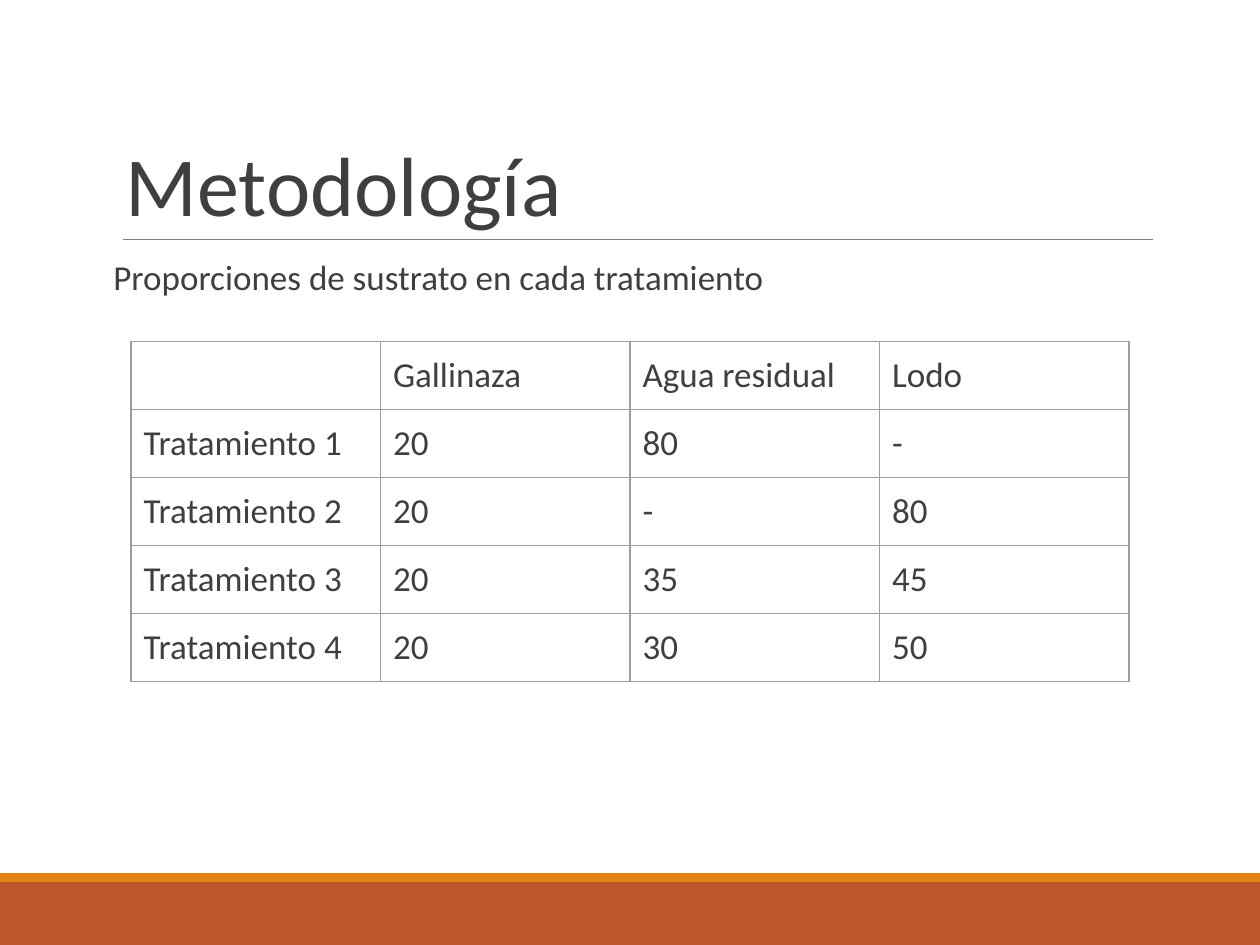
import pptx
import pptx.dml.color
import pptx.enum.shapes
import pptx.enum.text
import pptx.oxml
import pptx.oxml.ns
import pptx.util
from lxml import etree

RGBColor = pptx.dml.color.RGBColor
RUST = RGBColor(0xBD, 0x58, 0x2C)
ORANGE = RGBColor(0xE4, 0x83, 0x12)
RULE = RGBColor(0x7F, 0x7F, 0x7F)
TEXT = RGBColor(0x3F, 0x3F, 0x3F)
BORDER = RGBColor(0x9E, 0x9E, 0x9E)
qn = pptx.oxml.ns.qn
Inches, Pt = pptx.util.Inches, pptx.util.Pt

prs = pptx.Presentation()
prs.slide_width, prs.slide_height = Inches(10), Inches(7.5)
s = prs.slides.add_slide(prs.slide_layouts[6])


def style(p, size):
    for r in p.runs:
        r.font.size = Pt(size)
        r.font.name = "Calibri"
        r.font.color.rgb = TEXT


def add_text(text, top, height, size, inset, anchor, spacing):
    sp = s.shapes.add_textbox(Inches(0.9), Inches(top), Inches(8.25), Inches(height))
    tf = sp.text_frame
    tf.word_wrap = True
    tf.vertical_anchor = anchor
    tf.margin_left = tf.margin_right = Inches(inset)
    tf.text = text
    p = tf.paragraphs[0]
    p.line_spacing = spacing
    style(p, size)
    return p


# Footer bands
for top, height, color in ((7, 0.5, RUST), (6.93, 0.07, ORANGE)):
    sp = s.shapes.add_shape(pptx.enum.shapes.MSO_SHAPE.RECTANGLE,
                            0, Inches(top), prs.slide_width, Inches(height))
    sp.shadow.inherit = False
    sp.fill.solid()
    sp.fill.fore_color.rgb = color
    sp.line.fill.background()

# Rule under the title
rule = s.shapes.add_connector(pptx.enum.shapes.MSO_CONNECTOR.STRAIGHT,
                              Inches(0.98), Inches(1.9), Inches(9.15), Inches(1.9))
rule.line.color.rgb = RULE
rule.line.width = Pt(0.75)
etree.SubElement(rule.element.spPr, qn("a:effectLst"))

# Title and subtitle
ANCHOR = pptx.enum.text.MSO_ANCHOR
add_text("Metodología", 0.31, 1.59, 48, 0.1, ANCHOR.BOTTOM, 0.85)
p = add_text("Proporciones de sustrato en cada tratamiento",
             2.02, 3.06, 20, 0, ANCHOR.TOP, 0.9)
p.space_before, p.space_after = Pt(12), Pt(2)

# Table of proportions
rows = [
    ("", "Gallinaza", "Agua residual", "Lodo"),
    ("Tratamiento 1", "20", "80", "-"),
    ("Tratamiento 2", "20", "-", "80"),
    ("Tratamiento 3", "20", "35", "45"),
    ("Tratamiento 4", "20", "30", "50"),
]
COL, ROW = Inches(1.98), Inches(0.54)
table = s.shapes.add_table(len(rows), len(rows[0]), Inches(1.04), Inches(2.71),
                           COL * len(rows[0]), ROW * len(rows)).table
table.first_row = table.horz_banding = False
for col in table.columns:
    col.width = COL
for row, values in zip(table.rows, rows):
    row.height = ROW
    for cell, value in zip(row.cells, values):
        cell.margin_left = cell.margin_right = Inches(0.1)
        cell.margin_top = cell.margin_bottom = Inches(0.1)
        cell.text = value
        p = cell.text_frame.paragraphs[0]
        p.font.size = Pt(20)
        style(p, 20)
        # Borders come before the fill in the cell properties
        tcPr = cell._tc.get_or_add_tcPr()
        for side in ("lnL", "lnR", "lnT", "lnB"):
            ln = etree.SubElement(tcPr, qn("a:" + side), w=str(Pt(0.75)))
            fill = etree.SubElement(ln, qn("a:solidFill"))
            etree.SubElement(fill, qn("a:srgbClr"), val=str(BORDER))
        cell.fill.background()

prs.save("out.pptx")
